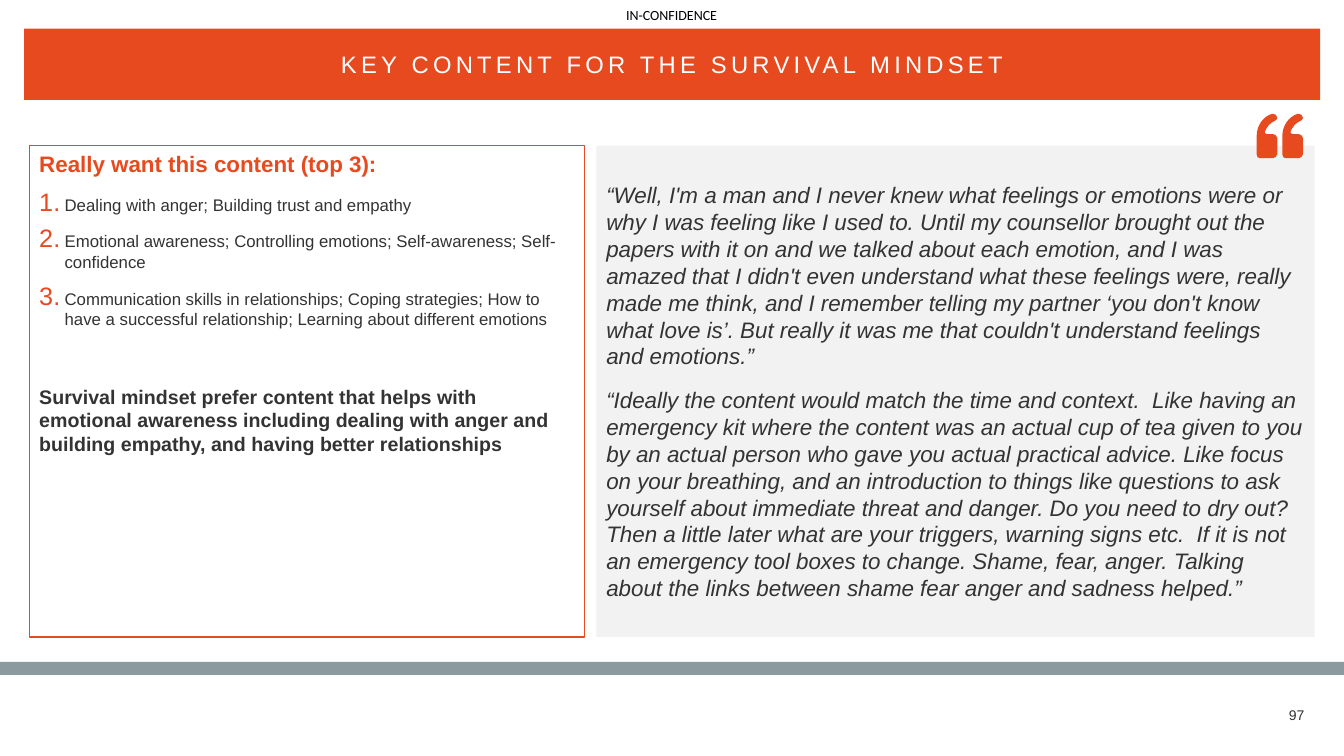
from lxml import etree
from pptx import Presentation
from pptx.dml.color import RGBColor
from pptx.enum.shapes import MSO_SHAPE
from pptx.enum.text import MSO_ANCHOR, PP_ALIGN
from pptx.oxml.ns import qn
from pptx.util import Cm, Pt

# Content
MARKING = "IN-CONFIDENCE"
TITLE = "KEY CONTENT FOR THE SURVIVAL MINDSET"
PAGE = "97"
HEADING = "Really want this content (top 3):"
TOP_THREE = [
    "Dealing with anger; Building trust and empathy",
    "Emotional awareness; Controlling emotions; Self-awareness; Self-confidence",
    "Communication skills in relationships; Coping strategies; How to have a "
    "successful relationship; Learning about different emotions",
]
SUMMARY = ("Survival mindset prefer content that helps with emotional awareness including "
           "dealing with anger and building empathy, and having better relationships")
QUOTES = [
    "“Well, I'm a man and I never knew what feelings or emotions were or why I was feeling "
    "like I used to. Until my counsellor brought out the papers with it on and we talked "
    "about each emotion, and I was amazed that I didn't even understand what these feelings "
    "were, really made me think, and I remember telling my partner ‘you don't know what love "
    "is’. But really it was me that couldn't understand feelings and emotions.”",
    "“Ideally the content would match the time and context.  Like having an emergency kit "
    "where the content was an actual cup of tea given to you by an actual person who gave you "
    "actual practical advice. Like focus on your breathing, and an introduction to things like "
    "questions to ask yourself about immediate threat and danger. Do you need to dry out?\n"
    "Then a little later what are your triggers, warning signs etc.  If it is not an emergency "
    "tool boxes to change. Shame, fear, anger. Talking about the links between shame fear anger "
    "and sadness helped.”",
]
COLORS = {"orange": "E84A20", "grey": "8B9A9F", "pale": "F2F2F2",
          "text": "333333", "white": "FFFFFF", "black": "000000"}

# One quote mark in hundredths of an inch: a pair is a line end, six numbers a curve
MARK_START = (0, 40)
MARK = [(0, 42, 1, 44, 3, 44), (16, 44), (18, 44, 20.5, 42, 20.5, 40), (20.5, 24),
        (20.5, 22, 18, 20, 16, 20), (10, 20), (9, 20, 8, 19, 8, 18),
        (10, 13, 13, 9, 18, 7), (19, 7, 20.5, 5, 20.5, 4), (20.5, 1, 18, 0, 16, 0),
        (15, 0), (6, 3, 0, 12, 0, 22)]
MARK_SHIFTS = (0, 25.5)
MARK_LEFT, MARK_TOP = 31.67, 2.87
UNIT = 0.0254
PANEL_TOP, PANEL_HEIGHT = 3.67, 12.38


def rgb(name):
    return RGBColor.from_string(COLORS[name])


def add_rect(left, top, width, height, fill=None, line=None):
    sp = slide.shapes.add_shape(MSO_SHAPE.RECTANGLE, Cm(left), Cm(top), Cm(width), Cm(height))
    paint(sp, fill, line)
    sp.text_frame.word_wrap = True
    return sp


def paint(sp, fill=None, line=None):
    sp.shadow.inherit = False
    if fill:
        sp.fill.solid()
        sp.fill.fore_color.rgb = rgb(fill)
    else:
        sp.fill.background()
    if line:
        sp.line.color.rgb = rgb(line)
        sp.line.width = Pt(1)
    else:
        sp.line.fill.background()


def add_label(text, left, top, width, height, **style):
    tf = slide.shapes.add_textbox(Cm(left), Cm(top), Cm(width), Cm(height)).text_frame
    tf.margin_left = tf.margin_right = tf.margin_top = tf.margin_bottom = 0
    tf.word_wrap = False
    write(tf, text, **style)
    return tf


def write(tf, text, size, color="text", bold=False, italic=False, align=PP_ALIGN.LEFT,
          before=12, font="Arial", numbered=False):
    first = not tf.text
    p = tf.paragraphs[0] if first else tf.add_paragraph()
    p.text = text
    p.alignment = align
    p.space_before = Pt(0 if first else before)
    if numbered:
        number(p)
    for r in p.runs:
        r.font.name, r.font.size = font, Pt(size)
        r.font.bold, r.font.italic = bold, italic
        r.font.color.rgb = rgb(color)
    return p


def number(p):
    pPr = p._p.get_or_add_pPr()
    indent = Cm(0.64)
    pPr.set("marL", str(indent))
    pPr.set("indent", str(-indent))
    clr = etree.SubElement(pPr, qn("a:buClr"))
    etree.SubElement(clr, qn("a:srgbClr"), val=COLORS["orange"])
    etree.SubElement(pPr, qn("a:buSzPct"), val="150000")
    etree.SubElement(pPr, qn("a:buFont"), typeface="+mj-lt")
    etree.SubElement(pPr, qn("a:buAutoNum"), type="arabicPeriod")


def mark_point(x, y):
    return Cm(MARK_LEFT + x * UNIT), Cm(MARK_TOP + y * UNIT)


def add_quote_marks():
    builder = slide.shapes.build_freeform(*mark_point(*MARK_START))
    for shift in MARK_SHIFTS:
        if shift:
            builder.move_to(*mark_point(MARK_START[0] + shift, MARK_START[1]))
        ends = [mark_point(part[-2] + shift, part[-1]) for part in MARK]
        builder.add_line_segments(ends, close=True)
    sp = builder.convert_to_shape()
    paint(sp, "orange")
    # Turn the rounded segments into curves
    segments = list(sp._element.iter(qn("a:lnTo")))
    parts = [(shift, part) for shift in MARK_SHIFTS for part in MARK]
    for segment, (shift, part) in zip(segments, parts):
        if len(part) == 6:
            segment.tag = qn("a:cubicBezTo")
            for i in (0, 2):
                pt = etree.Element(qn("a:pt"), x=str(Cm((part[i] + shift) * UNIT)),
                                   y=str(Cm(part[i + 1] * UNIT)))
                segment.insert(i // 2, pt)


prs = Presentation()
prs.slide_width, prs.slide_height = Cm(33.87), Cm(19.05)
slide = prs.slides.add_slide(prs.slide_layouts[6])

# Page furniture
tf = add_label(PAGE, 31.9, 17.75, 0.97, 0.53, size=10, align=PP_ALIGN.RIGHT)
tf.word_wrap = True
tf.vertical_anchor = MSO_ANCHOR.MIDDLE
add_rect(0, 16.68, 33.87, 0.33, fill="grey")
add_label(MARKING, 15.78, 0.17, 2.39, 0.43, size=10, color="black", font="Calibri")

# Title bar
tf = add_rect(0.61, 0.72, 32.66, 1.8, fill="orange").text_frame
p = write(tf, TITLE, 17, "white", align=PP_ALIGN.CENTER)
for r in p.runs:
    r.font._element.set("spc", "300")

# Quotes panel
tf = add_rect(15.03, PANEL_TOP, 18.1, PANEL_HEIGHT, fill="pale").text_frame
for quote in QUOTES:
    write(tf, quote, 16, italic=True)

# Top three panel
tf = add_rect(0.74, PANEL_TOP, 13.99, PANEL_HEIGHT, line="orange").text_frame
tf.vertical_anchor = MSO_ANCHOR.TOP
write(tf, HEADING, 16, "orange", bold=True)
for item in TOP_THREE:
    write(tf, item, 12, numbered=True)
write(tf, SUMMARY, 14, bold=True, before=40)

add_quote_marks()

prs.save("out.pptx")
